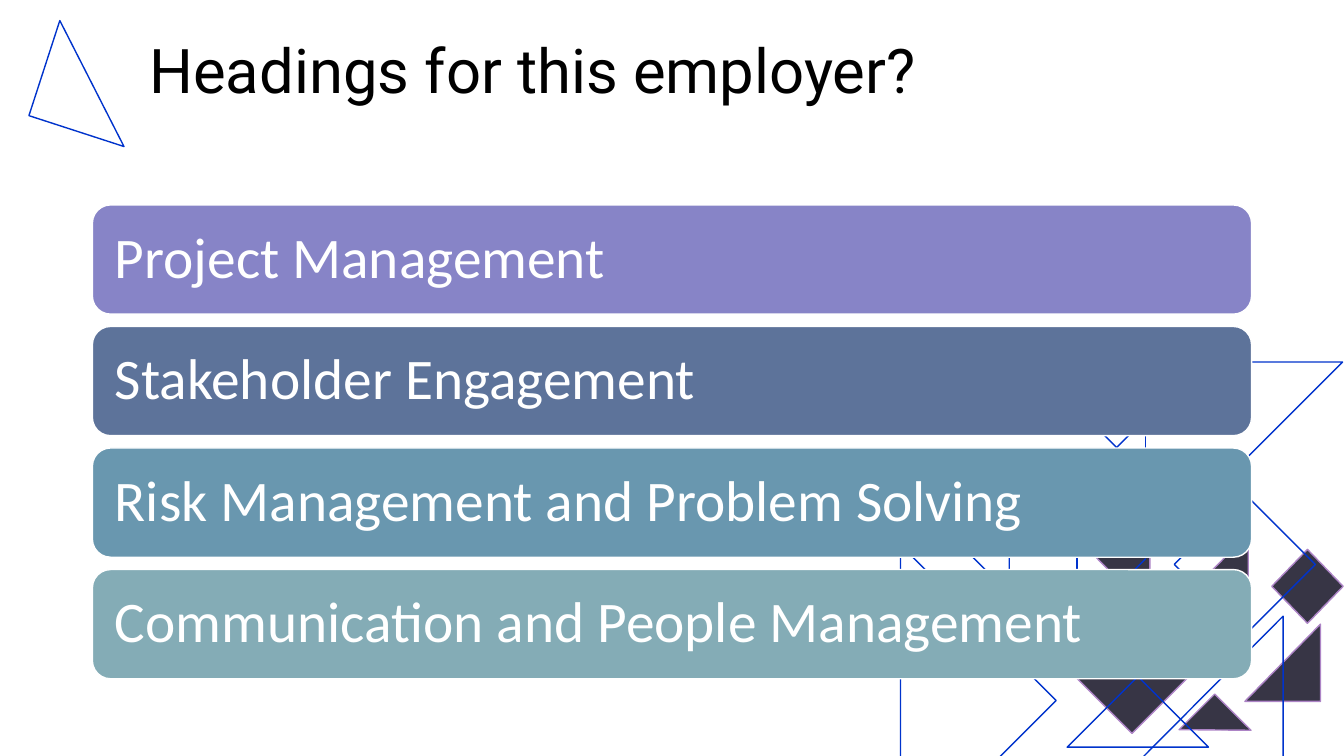
from dataclasses import dataclass

from lxml import etree
from pptx import Presentation
from pptx.dml.color import RGBColor
from pptx.enum.shapes import MSO_CONNECTOR, MSO_SHAPE
from pptx.enum.text import MSO_ANCHOR, PP_ALIGN
from pptx.oxml.ns import qn
from pptx.shapes.autoshape import Shape
from pptx.slide import Slide
from pptx.util import Inches, Pt

TRIANGLE = MSO_SHAPE.RIGHT_TRIANGLE
DIAMOND = MSO_SHAPE.DIAMOND
ROUNDED = MSO_SHAPE.ROUNDED_RECTANGLE
STRAIGHT = MSO_CONNECTOR.STRAIGHT
MIDDLE = MSO_ANCHOR.MIDDLE
LEFT = PP_ALIGN.LEFT

SLIDE_WIDTH, SLIDE_HEIGHT = Inches(13.333), Inches(7.5)
COLUMNS, ROWS = 160, 90

COLORS = {
    "dark": "373545",
    "orchid": "AD84C6",
    "blue": "0033CC",
    "black": "000000",
    "white": "FFFFFF",
    "violet": "8784C7",
    "slate": "5D739A",
    "steel": "6997AF",
    "teal": "84ACB6",
}


@dataclass(frozen=True)
class Ornament:
    kind: MSO_SHAPE
    column: float
    row: float
    columns: float
    rows: float
    rotation: float = 0
    flipped: bool = False


@dataclass(frozen=True)
class Segment:
    start: tuple[float, float]
    end: tuple[float, float]


@dataclass(frozen=True)
class Heading:
    text: str
    color: str


SOLID_ORNAMENTS = [
    Ornament(DIAMOND, 151.4, 65.4, 8.5, 8.8),
    Ornament(TRIANGLE, 128, 71, 13.3, 13.6, 315),
    Ornament(TRIANGLE, 141.6, 83.9, 6.1, 6, 225, True),
    Ornament(TRIANGLE, 148.1, 74.4, 9.2, 9, 270),
    Ornament(TRIANGLE, 123.6, 59.3, 13.3, 13.6, 180),
]
PARALLELOGRAM = [(148.6, 63.5), (144.4, 67.8), (144.4, 76.4), (148.6, 72)]
OUTLINE_ORNAMENTS = [
    Ornament(TRIANGLE, 5, 4, 11.9, 11.9, 108, True),
    Ornament(TRIANGLE, 129.5, 83, 11.9, 11.9, 225, True),
    Ornament(TRIANGLE, 134.9, 73.4, 17.9, 17.8, 270),
    Ornament(DIAMOND, 139.8, 58.8, 16.8, 16.8),
    Ornament(TRIANGLE, 94.1, 70.3, 26.2, 26.2, 225),
    Ornament(TRIANGLE, 114.2, 56.3, 11.9, 11.9, 135, True),
    Ornament(TRIANGLE, 128.2, 30, 26.2, 26.2, 315),
]
SEGMENTS = [
    Segment((136.4, 50), (136.4, 66.4)),
    Segment((128.2, 58.2), (128.2, 74.8)),
    Segment((128.2, 74.8), (136.4, 66.5)),
    Segment((128, 58.2), (136.4, 49.8)),
]
HEADINGS = [
    Heading("Project Management", "violet"),
    Heading("Stakeholder Engagement", "slate"),
    Heading("Risk Management and Problem Solving", "steel"),
    Heading("Communication and People Management", "teal"),
]
BAR_COLUMN, BAR_COLUMNS = 11, 138
BAR_ROW, BAR_ROWS, BAR_PITCH = 24.4, 13, 14.47


def across(columns: float) -> int:
    return round(SLIDE_WIDTH * columns / COLUMNS)


def down(rows: float) -> int:
    return round(SLIDE_HEIGHT * rows / ROWS)


def rgb(color: str) -> RGBColor:
    return RGBColor.from_string(COLORS[color])


def paint(shape: Shape, line: str, fill: str | None = None) -> None:
    shape.shadow.inherit = False
    if fill:
        shape.fill.solid()
        shape.fill.fore_color.rgb = rgb(fill)
    else:
        shape.fill.background()
    shape.line.color.rgb = rgb(line)
    shape.line.width = Pt(1)


def write(shape: Shape, text: str, *, font: str, size: float, color: str,
          inset: float) -> None:
    frame = shape.text_frame
    frame.word_wrap = True
    frame.vertical_anchor = MIDDLE
    frame.margin_left = frame.margin_right = Inches(inset)
    frame.margin_top = frame.margin_bottom = Inches(inset)
    paragraph = frame.paragraphs[0]
    paragraph.text = text
    paragraph.alignment = LEFT
    paragraph.line_spacing = 0.9
    paragraph.font.name = font
    paragraph.font.size = Pt(size)
    paragraph.font.color.rgb = rgb(color)


def draw_ornament(slide: Slide, ornament: Ornament, line: str,
                  fill: str | None = None) -> None:
    shape = slide.shapes.add_shape(
        ornament.kind, across(ornament.column), down(ornament.row),
        across(ornament.columns), down(ornament.rows))
    shape.rotation = ornament.rotation
    if ornament.flipped:
        shape.element.spPr.xfrm.set("flipH", "1")
    paint(shape, line, fill)


def draw_parallelogram(slide: Slide) -> None:
    corners = [(across(column), down(row)) for column, row in PARALLELOGRAM]
    builder = slide.shapes.build_freeform(*corners[0])
    builder.add_line_segments(corners[1:], close=True)
    paint(builder.convert_to_shape(), "orchid", "dark")


def draw_segment(slide: Slide, segment: Segment) -> None:
    connector = slide.shapes.add_connector(
        STRAIGHT, across(segment.start[0]), down(segment.start[1]),
        across(segment.end[0]), down(segment.end[1]))
    connector.line.color.rgb = rgb("blue")
    connector.line.width = Pt(1)
    etree.SubElement(connector.element.spPr, qn("a:effectLst"))


def draw_title(slide: Slide) -> None:
    title = slide.shapes.add_textbox(
        across(16.6), down(0), across(138), down(17.4))
    write(title, "Headings for this employer?", font="Roboto", size=44,
          color="black", inset=0.1)


def draw_heading(slide: Slide, heading: Heading, position: int) -> None:
    bar = slide.shapes.add_shape(
        ROUNDED, across(BAR_COLUMN), down(BAR_ROW + position * BAR_PITCH),
        across(BAR_COLUMNS), down(BAR_ROWS))
    paint(bar, "white", heading.color)
    write(bar, heading.text, font="Calibri", size=41, color="white",
          inset=0.17)


def main() -> None:
    presentation = Presentation()
    presentation.slide_width = SLIDE_WIDTH
    presentation.slide_height = SLIDE_HEIGHT
    slide = presentation.slides.add_slide(presentation.slide_layouts[6])
    for ornament in SOLID_ORNAMENTS:
        draw_ornament(slide, ornament, "orchid", "dark")
    draw_parallelogram(slide)
    for ornament in OUTLINE_ORNAMENTS:
        draw_ornament(slide, ornament, "blue")
    for segment in SEGMENTS:
        draw_segment(slide, segment)
    draw_title(slide)
    for position, heading in enumerate(HEADINGS):
        draw_heading(slide, heading, position)
    presentation.save("out.pptx")


if __name__ == "__main__":
    main()
